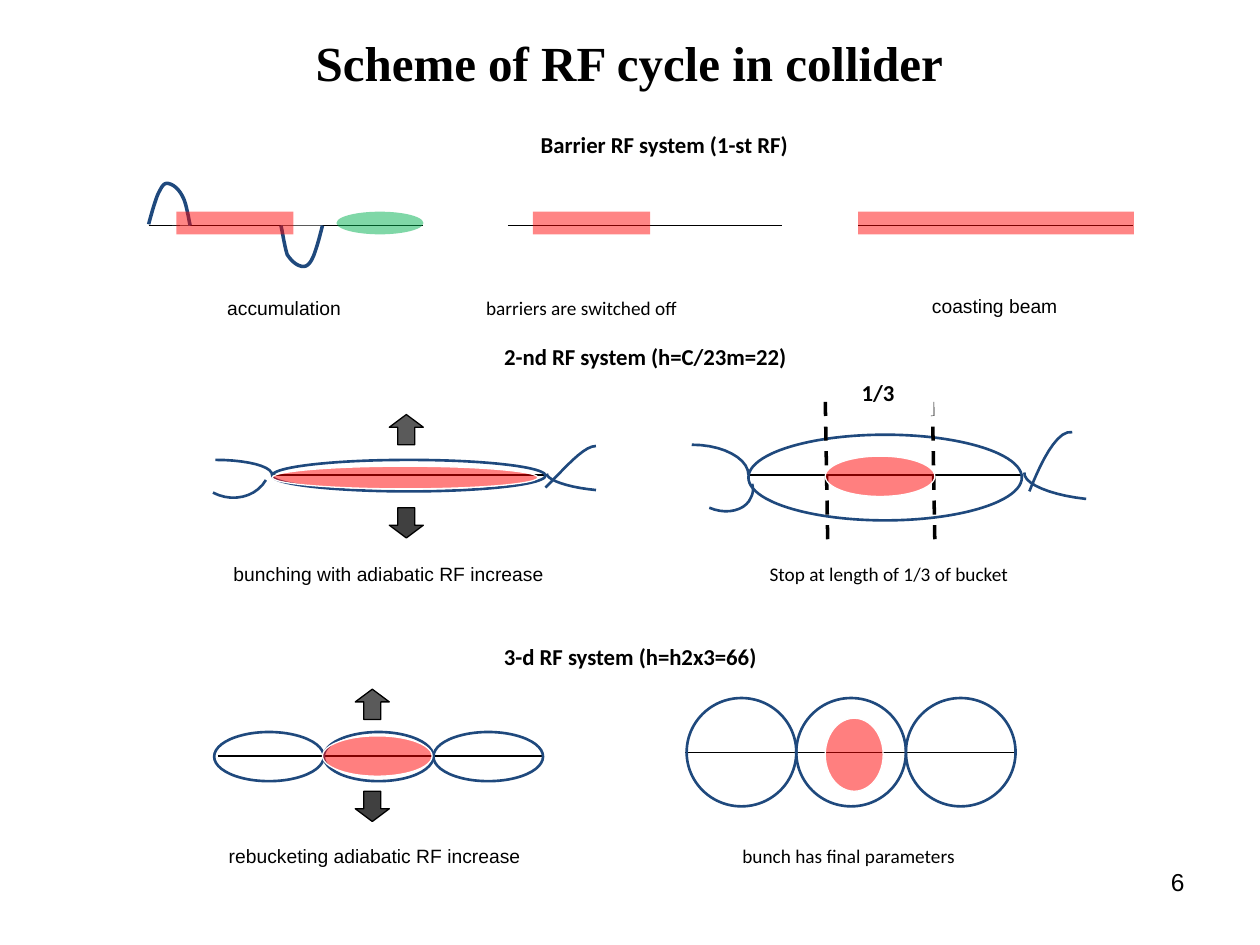
from lxml import etree
from pptx import Presentation, util as u
from pptx.dml.color import RGBColor
from pptx.enum import dml, shapes, text
from pptx.oxml.ns import qn

COLOURS = {"ink": "000000", "paper": "FFFFFF", "wave": "1F497D", "beam": "FF0000",
           "injected": "00B050", "up": "5A5A5A", "down": "404040"}
AXIS_1, AXIS_2, AXIS_3 = 1.79, 3.77, 6.0   # beam axis of each RF system
BAR_HEIGHT, AXIS_LENGTH, BUCKET = 0.18, 2.18, 0.87
THIN, OUTLINE, THICK = 0.75, 1.5, 2
LEFT, CENTRE, RIGHT = text.PP_ALIGN.LEFT, text.PP_ALIGN.CENTER, text.PP_ALIGN.RIGHT

TITLE = "Scheme of RF cycle in collider"
# wording, left, top, width, height, alignment
HEADINGS = [
    ("Barrier RF system (1-st RF)", 3.36, 0.99, 3.82, 0.39, CENTRE),
    ("2-nd RF system (h=C/23m=22)", 3.21, 2.67, 3.82, 0.29, CENTRE),
    ("3-d RF system (h=h2x3=66)", 3.09, 5.05, 3.82, 0.26, CENTRE),
    ("1/3", 6.74, 2.96, 0.67, 0.34, LEFT),
]
# wording, left, top, width, font, alignment
CAPTIONS = [
    ("accumulation", 1.51, 2.3, 1.49, "Arial", CENTRE),
    ("barriers are switched off", 3.76, 2.3, 2.7, "Calibri", LEFT),
    ("coasting beam", 7.03, 2.29, 1.73, "Arial", CENTRE),
    ("bunching with adiabatic RF increase", 1.32, 4.41, 3.53, "Arial", CENTRE),
    ("Stop at length of 1/3 of bucket", 5.49, 4.41, 3.13, "Calibri", CENTRE),
    ("rebucketing adiabatic RF increase", 1.21, 6.65, 3.53, "Arial", CENTRE),
    ("bunch has final parameters", 4.97, 6.65, 3.53, "Calibri", CENTRE),
]
# left, height, length
AXES = [(left, AXIS_1, AXIS_LENGTH) for left in (1.18, 4.03, 6.81)]
AXES += [(left, AXIS_2, AXIS_LENGTH) for left in (2.16, 5.94)]
AXES += [(1.73, AXIS_3, 2.59), (5.44, 5.97, 2.62)]
BEAM_BARS = [(1.4, 0.93), (4.23, 0.93), (6.81, 2.19)]   # left, length
# chains of Bezier curves: a start point, then three points per curve
BARRIERS = [
    [(1.18, 1.78), (1.21, 1.67), (1.24, 1.56), (1.27, 1.51), (1.3, 1.45), (1.32, 1.45),
     (1.35, 1.46), (1.38, 1.47), (1.42, 1.5), (1.45, 1.56), (1.48, 1.61), (1.5, 1.75), (1.51, 1.79)],
    [(2.56, 1.79), (2.53, 1.91), (2.5, 2.02), (2.47, 2.07), (2.44, 2.12), (2.41, 2.12),
     (2.38, 2.11), (2.35, 2.1), (2.31, 2.07), (2.28, 2.02), (2.26, 1.96), (2.24, 1.83), (2.23, 1.79)],
]
NEIGHBOUR_ARCS = [
    [(1.71, 3.65), (1.96, 3.65), (2.16, 3.7), (2.16, 3.77)],
    [(4.73, 3.89), (4.51, 3.87), (4.34, 3.81), (4.34, 3.76)],
    [(2.11, 3.81), (2.03, 3.95), (1.84, 3.99), (1.69, 3.91)],
    [(4.33, 3.87), (4.48, 3.72), (4.63, 3.54), (4.73, 3.54)],
    [(8.17, 3.9), (8.25, 3.7), (8.38, 3.41), (8.51, 3.43)],
    [(8.62, 3.96), (8.34, 3.93), (8.12, 3.84), (8.13, 3.75)],
    [(5.49, 3.53), (5.74, 3.53), (5.94, 3.64), (5.94, 3.77)],
    [(5.97, 3.84), (5.98, 3.88), (5.98, 3.91), (5.96, 3.95), (5.92, 4.05), (5.77, 4.09), (5.63, 4.03)],
]
# left, top, width, height
BUCKETS = [(2.16, 3.65, 2.17, 0.25), (5.94, 3.45, 2.17, 0.68)]
BUCKETS += [(left + BUCKET * i, top, BUCKET, height)
            for left, top, height in ((1.7, 5.81, 0.39), (5.45, 5.54, 0.86)) for i in range(3)]
BUNCHES = [(2.16, 3.7, 2.11, 0.18), (6.55, 3.62, BUCKET, 0.32),
           (2.56, 5.84, BUCKET, 0.32), (6.55, 5.7, 0.46, 0.58)]
ARROWS = [(3.09, 3.29, 4.03), (2.82, 5.47, 6.28)]   # left, top of up arrow, top of down arrow
BUNCH_LIMITS = [6.55, 7.4]

deck = Presentation()
deck.slide_width, deck.slide_height = u.Inches(10), u.Inches(7.5)
page = deck.slides.add_slide(deck.slide_layouts[5])


def rgb(name):
    return RGBColor.from_string(COLOURS[name])


def paint(shape, fill=None, line=None, width=THIN, alpha=None):
    shape.shadow.inherit = False
    if fill:
        shape.fill.solid()
        shape.fill.fore_color.rgb = rgb(fill)
        if alpha:
            colour = shape.fill._xPr.find(qn("a:solidFill"))[0]
            etree.SubElement(colour, qn("a:alpha")).set("val", str(alpha * 1000))
    else:
        shape.fill.background()
    if line:
        shape.line.color.rgb = rgb(line)
        shape.line.width = u.Pt(width)
    else:
        shape.line.fill.background()


def add_preset(kind, frame, **look):
    shape = page.shapes.add_shape(kind, *map(u.Inches, frame))
    paint(shape, **look)
    return shape


def add_line(start, end, width=THIN, dash=None):
    line = page.shapes.add_connector(shapes.MSO_CONNECTOR.STRAIGHT, *map(u.Inches, start + end))
    line.line.color.rgb = rgb("ink")
    line.line.width = u.Pt(width)
    if dash:
        line.line.dash_style = dash
    etree.SubElement(line._element.spPr, qn("a:effectLst"))


def add_curve(points, steps=10, **look):
    """Draw a chain of cubic Bezier curves as one open outline."""
    points = [(u.Inches(x), u.Inches(y)) for x, y in points]
    trail = []
    for first in range(0, len(points) - 1, 3):
        a, b, c, d = points[first:first + 4]
        for step in range(1, steps + 1):
            t = step / steps
            s = 1 - t
            trail.append(tuple(s**3 * a[k] + 3 * s * s * t * b[k] + 3 * s * t * t * c[k] + t**3 * d[k]
                               for k in (0, 1)))
    builder = page.shapes.build_freeform(*points[0])
    builder.add_line_segments(trail, close=False)
    paint(builder.convert_to_shape(), line="wave", **look)


def write(box, words, size, font, align, bold=False, anchor=text.MSO_ANCHOR.TOP):
    frame = box.text_frame
    frame.text = words
    frame.word_wrap = True
    frame.vertical_anchor = anchor
    para = frame.paragraphs[0]
    para.alignment = align
    span = para.runs[0].font
    span.size, span.name, span.bold = u.Pt(size), font, bold
    span.color.rgb = rgb("ink")


def add_text(frame, *style, **options):
    box = page.shapes.add_textbox(*map(u.Inches, frame))
    write(box, *style, **options)
    return box


title = page.shapes.title
title.left, title.top, title.width, title.height = map(u.Inches, (0.35, 0.21, 9.29, 0.57))
write(title, TITLE, 28, "Times New Roman", CENTRE, bold=True, anchor=text.MSO_ANCHOR.MIDDLE)

for left, height, length in AXES:
    add_line((left, height), (left + length, height))
for barrier in BARRIERS:
    add_curve(barrier, fill="paper", width=THICK)
for left, length in BEAM_BARS:
    add_preset(shapes.MSO_SHAPE.RECTANGLE, (left, 1.68, length, BAR_HEIGHT), fill="beam", alpha=48)
add_preset(shapes.MSO_SHAPE.OVAL, (2.67, 1.68, 0.69, BAR_HEIGHT), fill="injected", alpha=50)

for arc in NEIGHBOUR_ARCS:
    add_curve(arc, width=OUTLINE)
for bucket in BUCKETS:
    add_preset(shapes.MSO_SHAPE.OVAL, bucket, line="wave", width=OUTLINE)
for left, *tops in ARROWS:
    for kind, top, fill in zip((shapes.MSO_SHAPE.UP_ARROW, shapes.MSO_SHAPE.DOWN_ARROW), tops, ("up", "down")):
        arrow = add_preset(kind, (left, top, 0.27, 0.24), fill=fill, line="ink")
        arrow.adjustments[1] = 0.42
for x in BUNCH_LIMITS:
    add_line((x, 3.19), (x + 0.02, 4.32), THICK, dml.MSO_LINE.DASH)

for words, *frame, align in HEADINGS:
    heading = add_text(frame, words, 13, "Calibri", align, bold=True)
    heading.fill.solid()
    heading.fill.fore_color.rgb = rgb("paper")
for bunch in BUNCHES:
    add_preset(shapes.MSO_SHAPE.OVAL, bunch, fill="beam", alpha=50, line="paper")
for words, left, top, width, font, align in CAPTIONS:
    add_text((left, top, width, 0.24), words, 11, font, align)
add_text((7.17, 6.83, 2.33, 0.52), "6", 14, "Arial", RIGHT)

deck.save("out.pptx")
